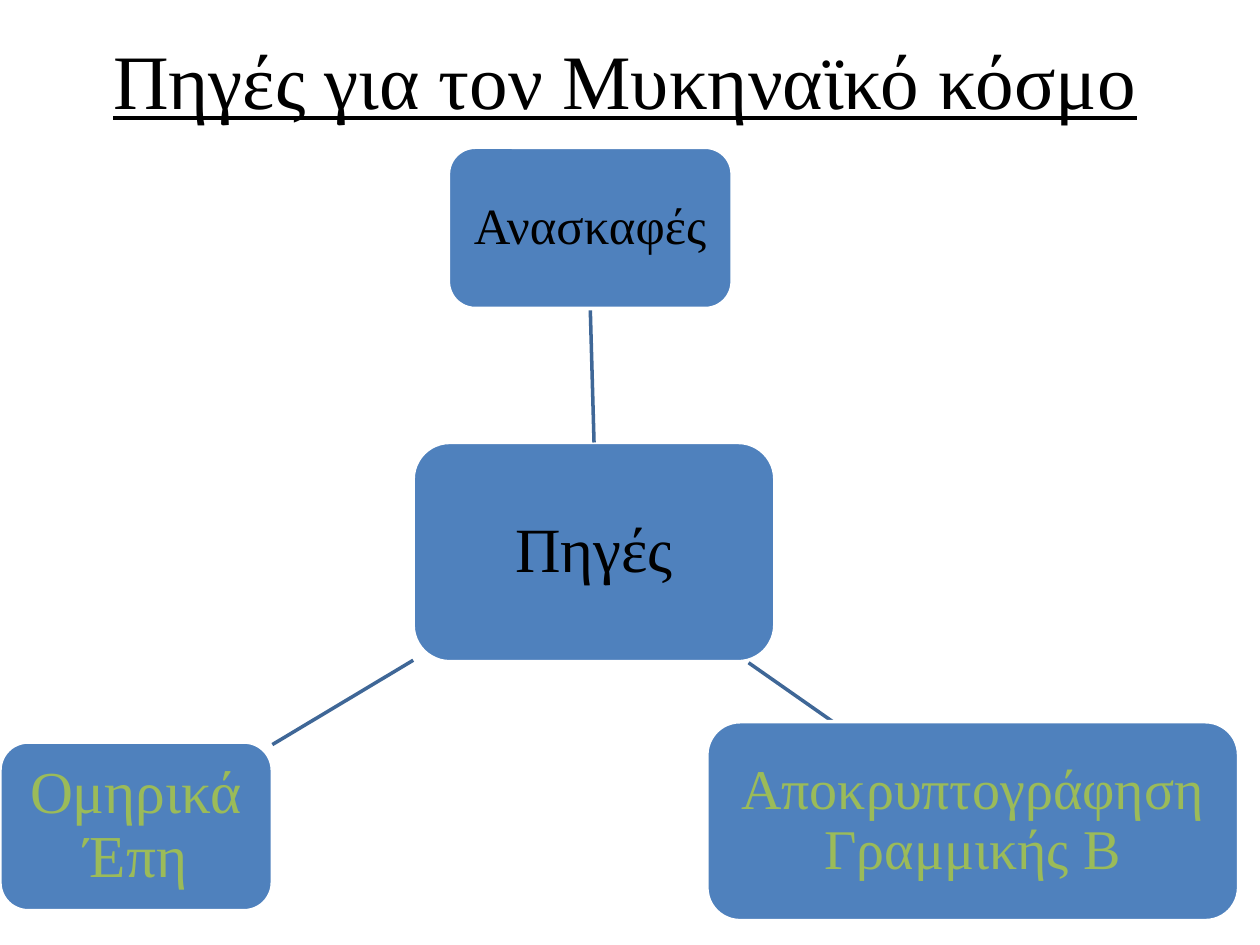
from pptx import Presentation
from pptx.dml.color import RGBColor
from pptx.enum.shapes import MSO_CONNECTOR, MSO_SHAPE
from pptx.enum.text import MSO_ANCHOR, PP_ALIGN
from pptx.oxml.ns import qn
from pptx.util import Cm, Pt

ROUNDED = MSO_SHAPE.ROUNDED_RECTANGLE
STRAIGHT = MSO_CONNECTOR.STRAIGHT
MIDDLE = MSO_ANCHOR.MIDDLE
CENTER = PP_ALIGN.CENTER
TOP, BOTTOM = 0, 2

FONT = "Times New Roman"
BLACK, WHITE, GREEN = "000000", "FFFFFF", "9BBB59"
BLUE, DARK_BLUE = "4F81BD", "3F6797"

# Content: boxes are (left, top, width, height) in cm
TITLE = "Πηγές για τον Μυκηναϊκό κόσμο"
TITLE_BOX = (0.74, 0.3, 23.72, 2.59)
HUB = {"text": "Πηγές", "box": (8.33, 8.92, 7.29, 4.42), "size": 36, "color": BLACK}
# A spoke is (x1, y1, x2, y2) in cm; without one it joins the facing sides
SOURCES = [
    {"text": "Ανασκαφές", "box": (9.04, 2.97, 5.72, 3.25), "size": 29,
     "color": BLACK, "spoke": None},
    {"text": "Αποκρυπτογράφηση Γραμμικής Β", "box": (14.25, 14.55, 10.72, 4.01),
     "size": 32, "color": GREEN, "spoke": (15.09, 13.36, 16.79, 14.55)},
    {"text": "Ομηρικά Έπη", "box": (0, 14.96, 5.49, 3.4), "size": 34,
     "color": GREEN, "spoke": (8.33, 13.31, 5.49, 15.01)},
]


def rgb(color):
    return RGBColor.from_string(color)


def lengths(values):
    return [Cm(value) for value in values]


def write(shape, text, *, size, color, underline=False, spacing=1.0, inset=None):
    frame = shape.text_frame
    frame.word_wrap = True
    frame.vertical_anchor = MIDDLE
    if inset is not None:
        frame.margin_left = frame.margin_right = Cm(inset)
        frame.margin_top = frame.margin_bottom = Cm(inset)
    paragraph = frame.paragraphs[0]
    paragraph.alignment = CENTER
    paragraph.line_spacing = spacing
    run = paragraph.add_run()
    run.text = text
    run.font.name = FONT
    run.font.size = Pt(size)
    run.font.underline = underline
    run.font.color.rgb = rgb(color)


def add_box(slide, item):
    box = slide.shapes.add_shape(ROUNDED, *lengths(item["box"]))
    box.shadow.inherit = False
    box.fill.solid()
    box.fill.fore_color.rgb = rgb(BLUE)
    box.line.color.rgb = rgb(WHITE)
    box.line.width = Pt(2)
    write(box, item["text"], size=item["size"], color=item["color"],
          spacing=0.9, inset=0.22)
    return box


def add_spoke(slide, ends):
    spoke = slide.shapes.add_connector(STRAIGHT, *lengths(ends))
    spoke.line.color.rgb = rgb(DARK_BLUE)
    spoke.line.width = Pt(2)
    properties = spoke._element.spPr
    properties.append(properties.makeelement(qn("a:effectLst"), {}))
    return spoke


def main():
    deck = Presentation()
    deck.slide_width, deck.slide_height = Cm(25.4), Cm(19.05)
    slide = deck.slides.add_slide(deck.slide_layouts[6])

    # Title
    heading = slide.shapes.add_textbox(*lengths(TITLE_BOX))
    write(heading, TITLE, size=44, color=BLACK, underline=True)

    # Hub, then each spoke beneath its source
    hub = add_box(slide, HUB)
    for source in SOURCES:
        spoke = add_spoke(slide, source["spoke"] or (0, 0, 0, 0))
        leaf = add_box(slide, source)
        if source["spoke"] is None:
            spoke.begin_connect(hub, TOP)
            spoke.end_connect(leaf, BOTTOM)

    deck.save("out.pptx")


if __name__ == "__main__":
    main()
